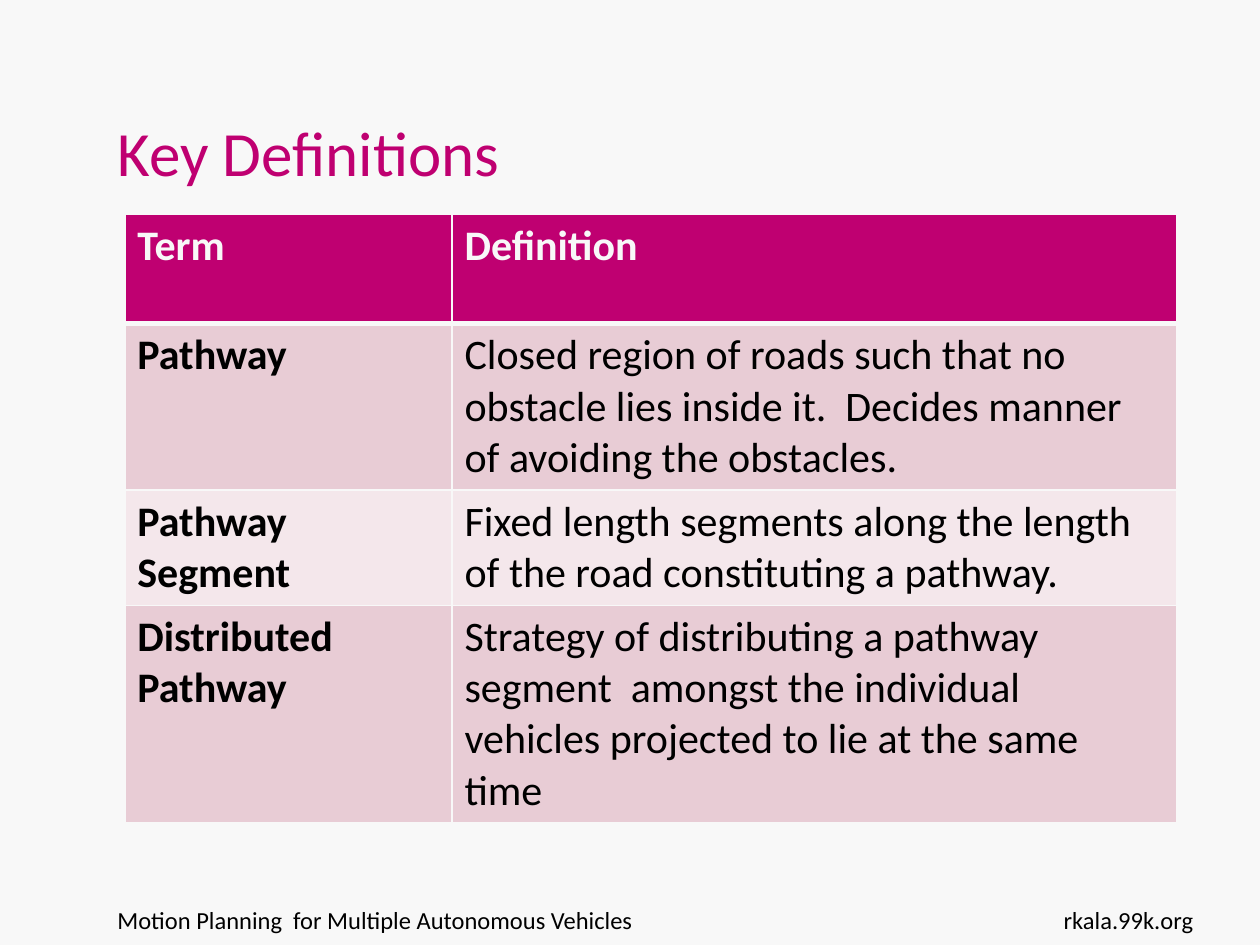
from lxml import etree
from pptx import Presentation
from pptx.dml.color import RGBColor
from pptx.enum.text import MSO_ANCHOR, PP_ALIGN
from pptx.oxml.ns import qn
from pptx.util import Pt

LEFT, RIGHT = PP_ALIGN.LEFT, PP_ALIGN.RIGHT
TOP, BOTTOM = MSO_ANCHOR.TOP, MSO_ANCHOR.BOTTOM

# Content
TITLE = "Key Definitions"
HEADER = ("Term", "Definition")
DEFINITIONS = [
    ("Pathway", "Closed region of roads such that no obstacle lies inside it.  "
                "Decides manner of avoiding the obstacles."),
    ("Pathway Segment", "Fixed length segments along the length of the road "
                        "constituting a pathway."),
    ("Distributed Pathway", "Strategy of distributing a pathway segment  amongst the "
                            "individual vehicles projected to lie at the same time"),
]
# Footer: text, left, width, alignment
FOOTERS = [
    ("Motion Planning  for Multiple Autonomous Vehicles", 60, 499, LEFT),
    ("rkala.99k.org", 581, 108, RIGHT),
]


class Theme:
    font = "Calibri"
    paper = "F8F8F8"
    accent = "BF0071"
    ink = "000000"
    bands = ("E8CCD5", "F4E7EB")
    title_size, table_size, footer_size = 36, 24, 14
    thin_line, thick_line = 1, 3


# Layout, in points
SLIDE_SIZE = (720, 540)
TITLE_BOX = (60, 21.6, 487.5, 90)
FOOTER_TOP, FOOTER_HEIGHT = 513.5, 37.5
TABLE_LEFT, TABLE_TOP = 71.3, 122.5
COLUMN_WIDTHS = (187, 414)
ROW_HEIGHT = 62.5


def write_text(text_frame, text, size, color=Theme.ink, bold=False,
               align=LEFT, anchor=TOP, wrap=True):
    text_frame.word_wrap = wrap
    text_frame.vertical_anchor = anchor
    paragraph = text_frame.paragraphs[0]
    paragraph.alignment = align
    run = paragraph.add_run()
    run.text = text
    run.font.name = Theme.font
    run.font.size = Pt(size)
    run.font.bold = bold
    run.font.color.rgb = RGBColor.from_string(color)


def set_borders(cell, widths):
    """Draw the left, right, top and bottom borders of a cell."""
    properties = cell._tc.get_or_add_tcPr()
    for index, (side, width) in enumerate(zip("LRTB", widths)):
        line = etree.Element(qn(f"a:ln{side}"), w=str(Pt(width)))
        fill = etree.SubElement(line, qn("a:solidFill"))
        etree.SubElement(fill, qn("a:srgbClr"), val=Theme.paper)
        properties.insert(index, line)


def add_title(slide):
    title = slide.shapes.title
    title.left, title.top, title.width, title.height = map(Pt, TITLE_BOX)
    write_text(title.text_frame, TITLE, Theme.title_size, color=Theme.accent,
               anchor=BOTTOM, wrap=False)


def add_definitions(slide):
    rows = [HEADER, *DEFINITIONS]
    table = slide.shapes.add_table(
        len(rows), len(HEADER), Pt(TABLE_LEFT), Pt(TABLE_TOP),
        Pt(sum(COLUMN_WIDTHS)), Pt(ROW_HEIGHT * len(rows))).table
    for column, width in zip(table.columns, COLUMN_WIDTHS):
        column.width = Pt(width)
    for row_index, row in enumerate(rows):
        table.rows[row_index].height = Pt(ROW_HEIGHT)
        is_header = row_index == 0
        fill = Theme.accent if is_header else Theme.bands[(row_index - 1) % 2]
        top = Theme.thick_line if row_index == 1 else Theme.thin_line
        bottom = Theme.thick_line if is_header else Theme.thin_line
        for column_index, text in enumerate(row):
            cell = table.cell(row_index, column_index)
            cell.fill.solid()
            cell.fill.fore_color.rgb = RGBColor.from_string(fill)
            set_borders(cell, (Theme.thin_line, Theme.thin_line, top, bottom))
            write_text(cell.text_frame, text, Theme.table_size,
                       color=Theme.paper if is_header else Theme.ink,
                       bold=is_header or column_index == 0)


def add_footers(slide):
    for text, left, width, align in FOOTERS:
        box = slide.shapes.add_textbox(Pt(left), Pt(FOOTER_TOP), Pt(width),
                                       Pt(FOOTER_HEIGHT))
        write_text(box.text_frame, text, Theme.footer_size, align=align)


def main():
    presentation = Presentation()
    presentation.slide_width, presentation.slide_height = map(Pt, SLIDE_SIZE)
    slide = presentation.slides.add_slide(presentation.slide_layouts[5])
    slide.background.fill.solid()
    slide.background.fill.fore_color.rgb = RGBColor.from_string(Theme.paper)
    add_title(slide)
    add_definitions(slide)
    add_footers(slide)
    presentation.save("out.pptx")


if __name__ == "__main__":
    main()
